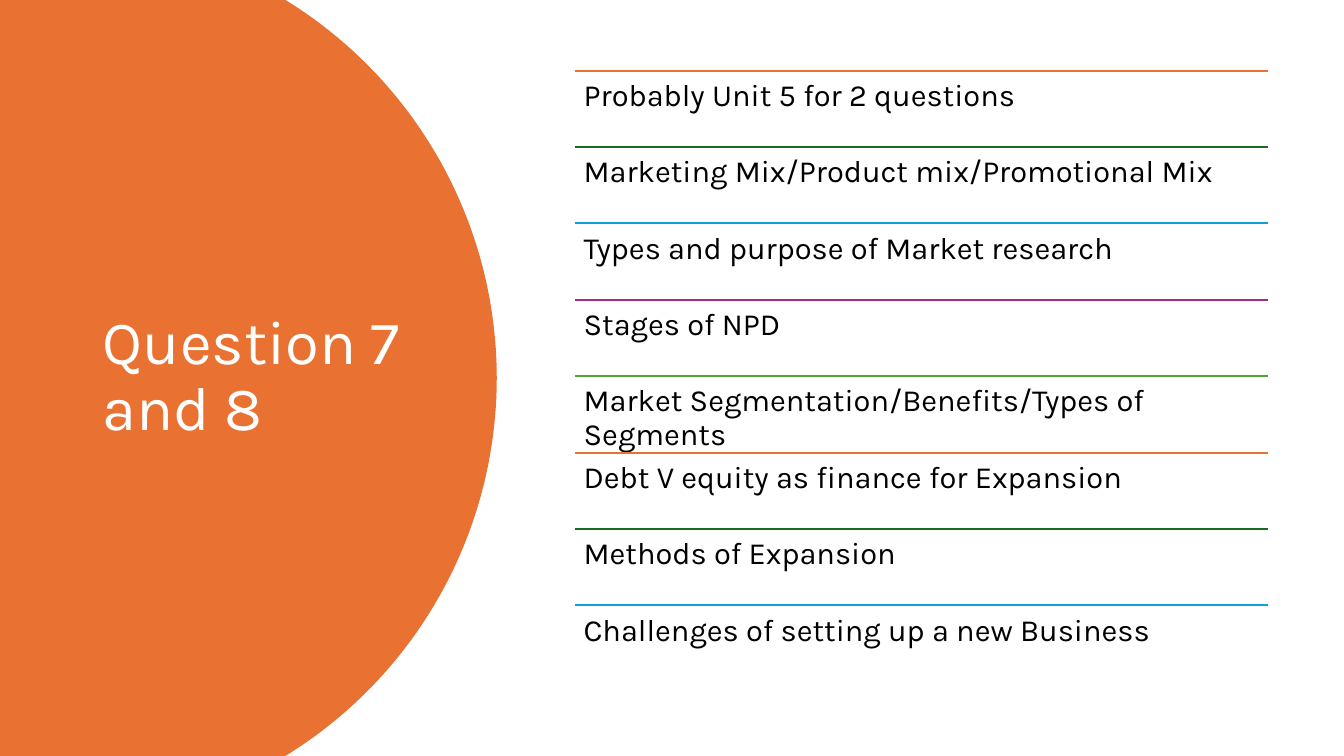
import math
from dataclasses import dataclass

from lxml import etree
from pptx import Presentation
from pptx.dml.color import RGBColor
from pptx.enum.shapes import MSO_CONNECTOR
from pptx.enum.text import MSO_ANCHOR
from pptx.oxml.ns import qn
from pptx.util import Cm, Pt

STRAIGHT = MSO_CONNECTOR.STRAIGHT
TOP, MIDDLE = MSO_ANCHOR.TOP, MSO_ANCHOR.MIDDLE

# Content
TITLE = "Question 7 and 8"
TOPICS = [
    "Probably Unit 5 for 2 questions",
    "Marketing Mix/Product mix/Promotional Mix",
    "Types and purpose of Market research",
    "Stages of NPD",
    "Market Segmentation/Benefits/Types of Segments",
    "Debt V equity as finance for Expansion",
    "Methods of Expansion",
    "Challenges of setting up a new Business",
]


@dataclass(frozen=True)
class Theme:
    font: str = "Karla"
    panel: str = "E97132"
    title_color: str = "FFFFFF"
    topic_color: str = "000000"
    rules: tuple = ("E97132", "196B24", "0F9ED5", "A02B93", "4EA72E")
    title_size: int = 44
    topic_size: int = 22
    rule_width: float = 1.5
    line_spacing: float = 0.9


THEME = Theme()

# Layout in centimetres
SLIDE_W, SLIDE_H = 33.87, 19.05
ARC_CENTER_X, ARC_RADIUS, ARC_STEPS = 1.34, 11.18, 120
TITLE_BOX = (2.34, 1.78, 8.2, 15.47)
LIST_LEFT, LIST_TOP, LIST_W, LIST_H = 14.48, 1.78, 17.47, 15.4
TOPIC_INSET = 0.23


def add_panel(slide):
    """Fill the left side up to a circular arc between the slide edges."""
    half_height = SLIDE_H / 2
    half_angle = math.asin(half_height / ARC_RADIUS)
    angles = [half_angle * (2 * i / ARC_STEPS - 1) for i in range(ARC_STEPS + 1)]
    arc = [(Cm(ARC_CENTER_X + ARC_RADIUS * math.cos(a)),
            Cm(half_height + ARC_RADIUS * math.sin(a))) for a in angles]
    outline = slide.shapes.build_freeform(0, 0)
    outline.add_line_segments(arc + [(0, Cm(SLIDE_H))], close=True)
    panel = outline.convert_to_shape()
    panel.shadow.inherit = False
    panel.fill.solid()
    panel.fill.fore_color.rgb = RGBColor.from_string(THEME.panel)
    panel.line.fill.background()


def add_text(slide, text, box, size, color, anchor):
    frame = slide.shapes.add_textbox(*map(Cm, box)).text_frame
    frame.word_wrap = True
    frame.vertical_anchor = anchor
    paragraph = frame.paragraphs[0]
    paragraph.text = text
    paragraph.line_spacing = THEME.line_spacing
    paragraph.font.name = THEME.font
    paragraph.font.size = Pt(size)
    paragraph.font.color.rgb = RGBColor.from_string(color)
    return frame


def add_rule(slide, top, color):
    rule = slide.shapes.add_connector(
        STRAIGHT, Cm(LIST_LEFT), Cm(top), Cm(LIST_LEFT + LIST_W), Cm(top))
    rule.line.color.rgb = RGBColor.from_string(color)
    rule.line.width = Pt(THEME.rule_width)
    etree.SubElement(rule._element.spPr, qn("a:effectLst"))


def add_topics(slide):
    row_height = LIST_H / len(TOPICS)
    for row, topic in enumerate(TOPICS):
        top = LIST_TOP + row * row_height
        add_rule(slide, top, THEME.rules[row % len(THEME.rules)])
        frame = add_text(slide, topic, (LIST_LEFT, top, LIST_W, row_height),
                         THEME.topic_size, THEME.topic_color, TOP)
        frame.margin_left = frame.margin_right = Cm(TOPIC_INSET)
        frame.margin_top = frame.margin_bottom = Cm(TOPIC_INSET)


def main():
    deck = Presentation()
    deck.slide_width, deck.slide_height = Cm(SLIDE_W), Cm(SLIDE_H)
    slide = deck.slides.add_slide(deck.slide_layouts[6])

    # Coloured panel with the title
    add_panel(slide)
    add_text(slide, TITLE, TITLE_BOX, THEME.title_size, THEME.title_color, MIDDLE)

    # Ruled list of topics
    add_topics(slide)

    deck.save("out.pptx")


if __name__ == "__main__":
    main()
